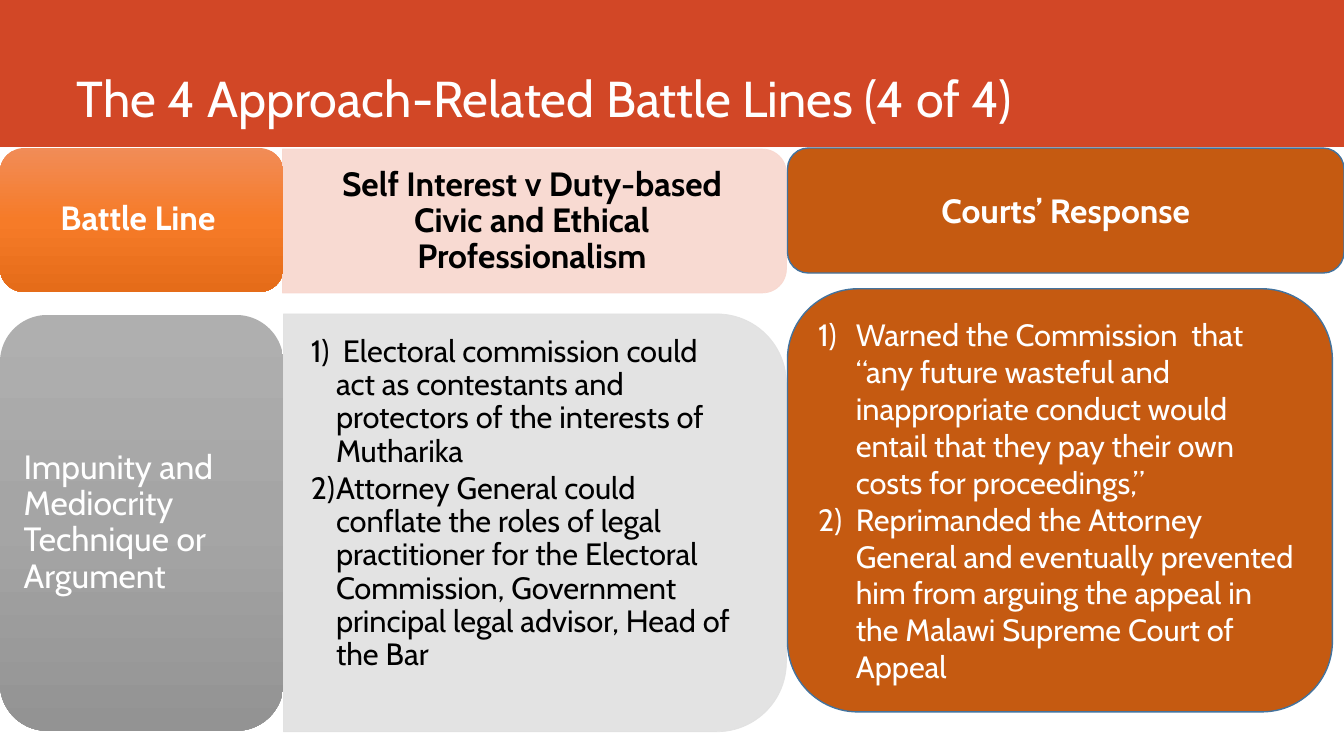
from dataclasses import dataclass

from lxml.etree import SubElement
from pptx import Presentation
from pptx.dml.color import RGBColor
from pptx.enum.shapes import MSO_SHAPE
from pptx.enum.text import MSO_ANCHOR, PP_ALIGN
from pptx.oxml.ns import qn
from pptx.util import Emu, Pt

EMU_PER_PX = 9525


@dataclass(frozen=True)
class Theme:
    font: str = "Cabin"
    title_size: int = 36
    heading_size: int = 24
    body_size: int = 22
    light_text: str = "FFFFFF"
    dark_text: str = "000000"
    banner: str = "D24726"
    response: str = "C55A11"
    response_line: str = "43739E"
    pink: str = "F8D7CE"
    grey: str = "E1E1E1"
    orange_gradient: tuple = ("F18C57", "F67B28", "E56C19")
    grey_gradient: tuple = ("AFAFAF", "A5A5A5", "939393")


THEME = Theme()


def px(length):
    return Emu(round(length * EMU_PER_PX))


def add_block(slide, preset, box, color=None, line=None):
    shape = slide.shapes.add_shape(preset, *map(px, box))
    shape.shadow.inherit = False
    if color:
        shape.fill.solid()
        shape.fill.fore_color.rgb = RGBColor.from_string(color)
    if line:
        shape.line.color.rgb = RGBColor.from_string(line)
        shape.line.width = Pt(1)
    else:
        shape.line.fill.background()
    return shape


def add_gradient_block(slide, box, colors):
    """Add a rounded block shaded evenly from top to bottom."""
    shape = add_block(slide, MSO_SHAPE.ROUNDED_RECTANGLE, box)
    shape.fill.background()
    properties = shape._element.spPr
    no_fill = properties.find(qn("a:noFill"))
    gradient = no_fill.makeelement(qn("a:gradFill"), {"rotWithShape": "1"})
    properties.replace(no_fill, gradient)
    stops = SubElement(gradient, qn("a:gsLst"))
    for index, color in enumerate(colors):
        position = 100000 * index // (len(colors) - 1)
        stop = SubElement(stops, qn("a:gs"), pos=str(position))
        SubElement(stop, qn("a:srgbClr"), val=color)
    SubElement(gradient, qn("a:lin"), ang="5400000", scaled="0")
    return shape


def add_right_rounded_panel(slide, box, color):
    """Add a translucent panel, turned so its rounded corners face right."""
    left, top, width, height = box
    shift = (width - height) / 2
    turned = (left + shift, top - shift, height, width)
    shape = add_block(slide, MSO_SHAPE.ROUND_2_SAME_RECTANGLE, turned, color, color)
    shape.rotation = 90
    shape.line.width = Pt(0.5)
    for node in shape._element.spPr.iter(qn("a:srgbClr")):
        SubElement(node, qn("a:alpha"), val="90000")


def add_text_box(slide, box, side_inset=10, vertical_inset=5):
    text_box = slide.shapes.add_textbox(*map(px, box))
    frame = text_box.text_frame
    frame.margin_left = frame.margin_right = px(side_inset)
    frame.margin_top = frame.margin_bottom = px(vertical_inset)
    return text_box


def write(shape, texts, size, color, bold=False, align=PP_ALIGN.LEFT,
          anchor=MSO_ANCHOR.MIDDLE, spacing=1.0, after=0, indent=0):
    """Fill a shape with paragraphs; an indent makes them a numbered list."""
    frame = shape.text_frame
    frame.word_wrap = True
    frame.vertical_anchor = anchor
    for index, text in enumerate(texts):
        paragraph = frame.add_paragraph() if index else frame.paragraphs[0]
        paragraph.text = text
        paragraph.alignment = align
        paragraph.line_spacing = spacing
        paragraph.space_after = Pt(after)
        font = paragraph.font
        font.name, font.size, font.bold = THEME.font, Pt(size), bold
        font.color.rgb = RGBColor.from_string(color)
        if indent:
            number_paragraph(paragraph, indent)


def number_paragraph(paragraph, indent):
    properties = paragraph._p.get_or_add_pPr()
    properties.set("marL", str(px(indent)))
    properties.set("indent", str(-px(indent)))
    numbering = properties.makeelement(qn("a:buAutoNum"), {"type": "arabicParenR"})
    properties.find(qn("a:defRPr")).addprevious(numbering)


def add_title(slide):
    add_block(slide, MSO_SHAPE.RECTANGLE, (0, 0, 1280, 140), THEME.banner)
    title = add_text_box(slide, (63, 23, 1129, 104))
    write(title, ["The 4 Approach-Related Battle Lines (4 of 4)"], THEME.title_size,
          THEME.light_text, anchor=MSO_ANCHOR.BOTTOM, spacing=0.9)


def add_battle_line_column(slide):
    heading = add_gradient_block(slide, (0, 141, 270, 137), THEME.orange_gradient)
    write(heading, ["Battle Line "], THEME.heading_size, THEME.light_text,
          bold=True, align=PP_ALIGN.CENTER, spacing=0.9)
    body = add_gradient_block(slide, (0, 300, 270, 396), THEME.grey_gradient)
    write(body, ["Impunity and Mediocrity Technique or Argument"],
          THEME.heading_size, THEME.light_text, spacing=0.9)


def add_interest_column(slide):
    add_right_rounded_panel(slide, (269, 142, 480, 137), THEME.pink)
    heading = add_text_box(slide, (270, 149, 473, 124), 26, 0)
    write(heading, ["Self Interest v Duty-based Civic and Ethical Professionalism"],
          THEME.heading_size, THEME.dark_text, bold=True,
          align=PP_ALIGN.CENTER, spacing=0.9)
    add_right_rounded_panel(slide, (270, 299, 479, 398), THEME.grey)
    body = add_text_box(slide, (270, 318, 460, 324), 26, 0)
    write(body, [
        " Electoral commission could act as contestants and protectors of the "
        "interests of Mutharika",
        "Attorney General could conflate the roles of legal practitioner for the "
        "Electoral Commission, Government principal legal advisor, Head of the Bar",
    ], THEME.body_size, THEME.dark_text, spacing=0.9, after=3, indent=24)


def add_response_column(slide):
    preset = MSO_SHAPE.FLOWCHART_ALTERNATE_PROCESS
    heading = add_block(slide, preset, (750, 141, 530, 119),
                        THEME.response, THEME.response_line)
    write(heading, ["Courts’ Response"], THEME.heading_size, THEME.light_text,
          bold=True, align=PP_ALIGN.CENTER)
    body = add_block(slide, preset, (750, 275, 519, 403),
                     THEME.response, THEME.response_line)
    write(body, [
        "Warned the Commission  that “any future wasteful and inappropriate conduct "
        "would entail that they pay their own costs for proceedings,”",
        "Reprimanded the Attorney General and eventually prevented him from arguing "
        "the appeal in the Malawi Supreme Court of Appeal",
    ], THEME.body_size, THEME.light_text, indent=36)


def main():
    presentation = Presentation()
    presentation.slide_width, presentation.slide_height = px(1280), px(720)
    slide = presentation.slides.add_slide(presentation.slide_layouts[6])
    add_title(slide)
    add_interest_column(slide)
    add_battle_line_column(slide)
    add_response_column(slide)
    presentation.save("out.pptx")


if __name__ == "__main__":
    main()
